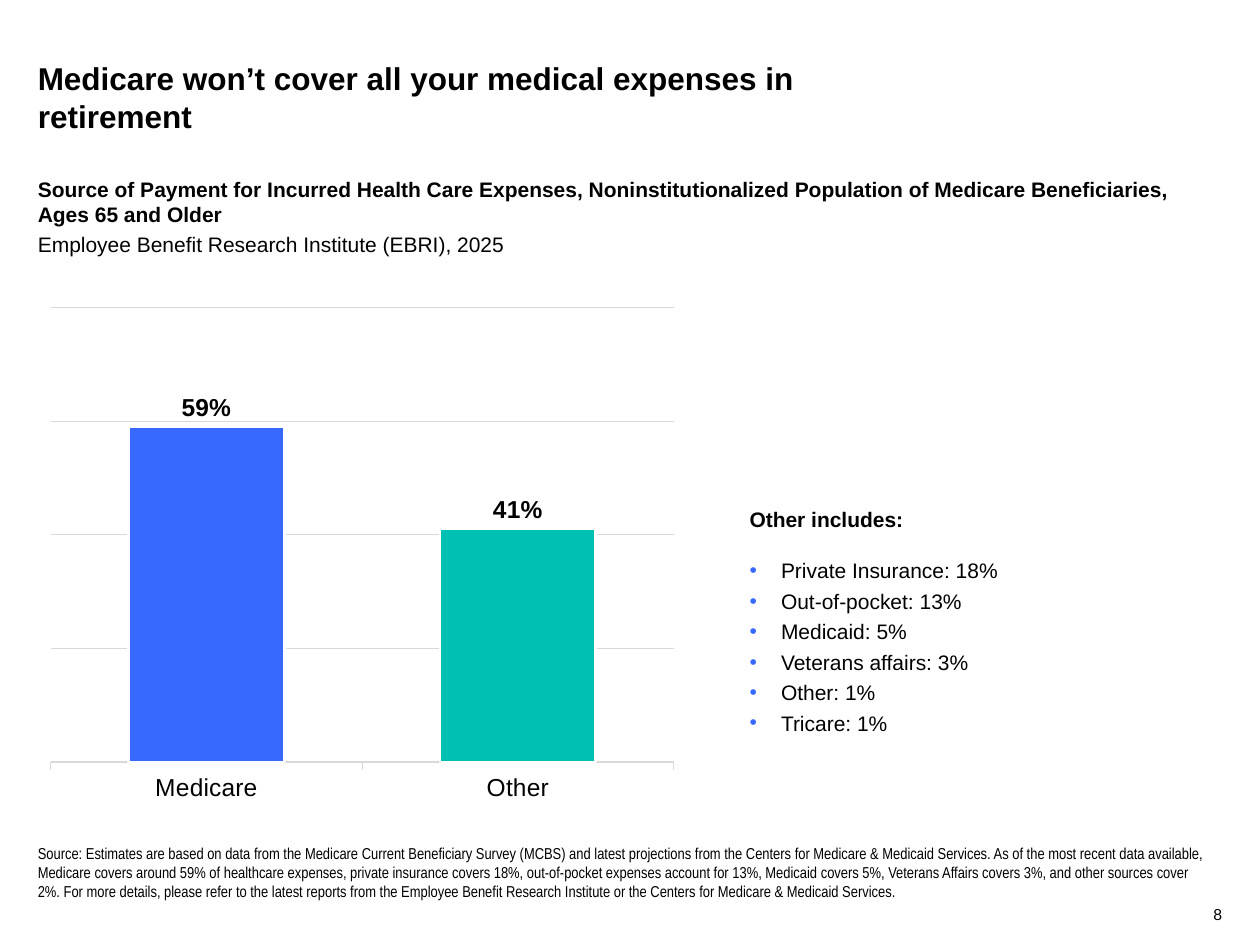
from lxml import etree
from pptx import Presentation
from pptx.chart.data import CategoryChartData
from pptx.dml.color import RGBColor
from pptx.enum.chart import XL_CHART_TYPE, XL_LABEL_POSITION, XL_TICK_LABEL_POSITION, XL_TICK_MARK
from pptx.enum.text import MSO_ANCHOR, MSO_AUTO_SIZE, PP_ALIGN
from pptx.oxml import parse_xml
from pptx.oxml.ns import nsdecls, qn
from pptx.util import Inches, Pt

COLUMN = XL_CHART_TYPE.COLUMN_CLUSTERED
OUT_END = XL_LABEL_POSITION.OUTSIDE_END
NO_TEXT = XL_TICK_LABEL_POSITION.NONE
NO_TICK, TICK_OUT = XL_TICK_MARK.NONE, XL_TICK_MARK.OUTSIDE
TOP, BOTTOM = MSO_ANCHOR.TOP, MSO_ANCHOR.BOTTOM
NO_FIT = MSO_AUTO_SIZE.NONE
LEFT, RIGHT = PP_ALIGN.LEFT, PP_ALIGN.RIGHT

COLORS = {"text": "000000", "blue": "3769FF", "teal": "00BFB3",
          "grid": "D9D9D9", "white": "FFFFFF"}
SHARES = {"Medicare": (0.59, "blue"), "Other": (0.41, "teal")}
OTHERS = ["Private Insurance: 18%", "Out-of-pocket: 13%", "Medicaid: 5%",
          "Veterans affairs: 3%", "Other: 1%", "Tricare: 1%"]
TITLE = "Medicare won’t cover all your medical expenses in retirement"
HEADS = [
    "Source of Payment for Incurred Health Care Expenses, Noninstitutionalized "
    "Population of Medicare Beneficiaries, Ages 65 and Older",
    "Employee Benefit Research Institute (EBRI), 2025",
]
SOURCE = (
    "Source: Estimates are based on data from the Medicare Current Beneficiary Survey "
    "(MCBS) and latest projections from the Centers for Medicare & Medicaid Services. "
    "As of the most recent data available, Medicare covers around 59% of healthcare "
    "expenses, private insurance covers 18%, out-of-pocket expenses account for 13%, "
    "Medicaid covers 5%, Veterans Affairs covers 3%, and other sources cover 2%. For "
    "more details, please refer to the latest reports from the Employee Benefit "
    "Research Institute or the Centers for Medicare & Medicaid Services."
)


def color(name):
    return RGBColor.from_string(COLORS[name])


def style(font, size, bold=False, face="Arial"):
    font.size, font.bold, font.name = Pt(size), bold, face
    font.color.rgb = color("text")


def place(shape, box):
    shape.left, shape.top, shape.width, shape.height = map(Inches, box)


def fill_text(shape, lines, size, bold=False, face="Arial", anchor=TOP,
              align=LEFT, before=0, inset=0):
    frame = shape.text_frame
    frame.word_wrap, frame.auto_size = True, NO_FIT
    frame.vertical_anchor = anchor
    frame.margin_left = frame.margin_right = Inches(inset)
    frame.margin_top = frame.margin_bottom = Inches(inset / 2)
    frame.text = "\n".join(lines)
    for i, para in enumerate(frame.paragraphs):
        para.alignment = align
        para.space_before = Pt(before if i else 0)
        for run in para.runs:
            style(run.font, size, bold and i == 0, face)
    return frame.paragraphs


def set_bullet(para, mark=None):
    props = para._p.get_or_add_pPr()
    indent = Inches(0.25) if mark else 0
    props.set("marL", str(indent))
    props.set("indent", str(-indent))
    if not mark:
        etree.SubElement(props, qn("a:buNone"))
        return
    tint = etree.SubElement(props, qn("a:buClr"))
    etree.SubElement(tint, qn("a:srgbClr"), val=COLORS["blue"])
    etree.SubElement(props, qn("a:buFont"), typeface="Arial")
    etree.SubElement(props, qn("a:buChar"), char=mark)


def add_head(slide, box):
    place(slide.shapes.title, box)
    fill_text(slide.shapes.title, [TITLE], 18, True)


def add_body(shape, box, lines, size, **looks):
    place(shape, box)
    for para in fill_text(shape, lines, size, **looks):
        set_bullet(para)


def set_plot(chart, x, y, w, h):
    area = chart._chartSpace.find(".//" + qn("c:plotArea"))
    for old in area.findall(qn("c:layout")):
        area.remove(old)
    area.insert(0, parse_xml(
        f'<c:layout {nsdecls("c")}><c:manualLayout><c:layoutTarget val="inner"/>'
        '<c:xMode val="edge"/><c:yMode val="edge"/>'
        f'<c:x val="{x}"/><c:y val="{y}"/><c:w val="{w}"/><c:h val="{h}"/>'
        '</c:manualLayout></c:layout>'))


def rule(line, name, width):
    line.color.rgb = color(name)
    line.width = Pt(width)


def add_bars(slide, box):
    data = CategoryChartData(number_format="0%")
    data.categories = list(SHARES)
    data.add_series("Series 1", [share for share, _ in SHARES.values()])
    chart = slide.shapes.add_chart(COLUMN, *map(Inches, box), data).chart
    chart.has_legend = chart.has_title = False
    style(chart.font, 10)
    set_plot(chart, 0.02, 0.02, 0.96, 0.88)

    cats, vals = chart.category_axis, chart.value_axis
    cats.major_tick_mark = TICK_OUT
    style(cats.tick_labels.font, 14)
    rule(cats.format.line, "grid", 0.75)
    vals.minimum_scale, vals.maximum_scale, vals.major_unit = 0, 0.8, 0.2
    vals.tick_label_position, vals.major_tick_mark = NO_TEXT, NO_TICK
    vals.has_major_gridlines = True
    rule(vals.major_gridlines.format.line, "grid", 0.75)
    vals.visible = False

    plot = chart.plots[0]
    plot.gap_width, plot.vary_by_categories = 100, False
    bars = plot.series[0]
    bars.format.fill.solid()
    bars.format.fill.fore_color.rgb = color("blue")
    rule(bars.format.line, "white", 1.5)
    for i, (_, tint) in enumerate(SHARES.values()):
        look = bars.points[i].format
        look.fill.solid()
        look.fill.fore_color.rgb = color(tint)
        rule(look.line, "white", 1.5)
    labels = bars.data_labels
    labels.show_value, labels.position = True, OUT_END
    labels.number_format, labels.number_format_is_linked = "0%", False
    style(labels.font, 14, True)


def add_list(slide, box):
    shape = slide.shapes.add_textbox(*map(Inches, box))
    head, *items = fill_text(shape, ["Other includes:"] + OTHERS, 12, True, inset=0.1)
    head.space_after = Pt(15)
    for para in items:
        para.space_after = Pt(3)
        set_bullet(para, "•")


def add_page(slide, box):
    shape = slide.shapes.add_textbox(*map(Inches, box))
    fill_text(shape, ["8"], 9, anchor=BOTTOM, align=RIGHT)


def main():
    deck = Presentation()
    deck.slide_width, deck.slide_height = Inches(10), Inches(7.5)
    slide = deck.slides.add_slide(deck.slide_layouts[3])
    _, intro, note = slide.placeholders
    add_head(slide, (0.3, 0.47, 7, 0.7))
    add_body(intro, (0.3, 1.4, 9.4, 0.7), HEADS, 12, bold=True, before=2.4)
    add_bars(slide, (0.3, 2.36, 5.15, 4.1))
    add_list(slide, (5.85, 3.97, 3.35, 1.93))
    add_body(note, (0.3, 6.7, 9.3, 0.45), [SOURCE], 9, face="Arial Narrow", anchor=BOTTOM)
    add_page(slide, (9.3, 7.15, 0.4, 0.18))
    deck.save("out.pptx")


if __name__ == "__main__":
    main()
